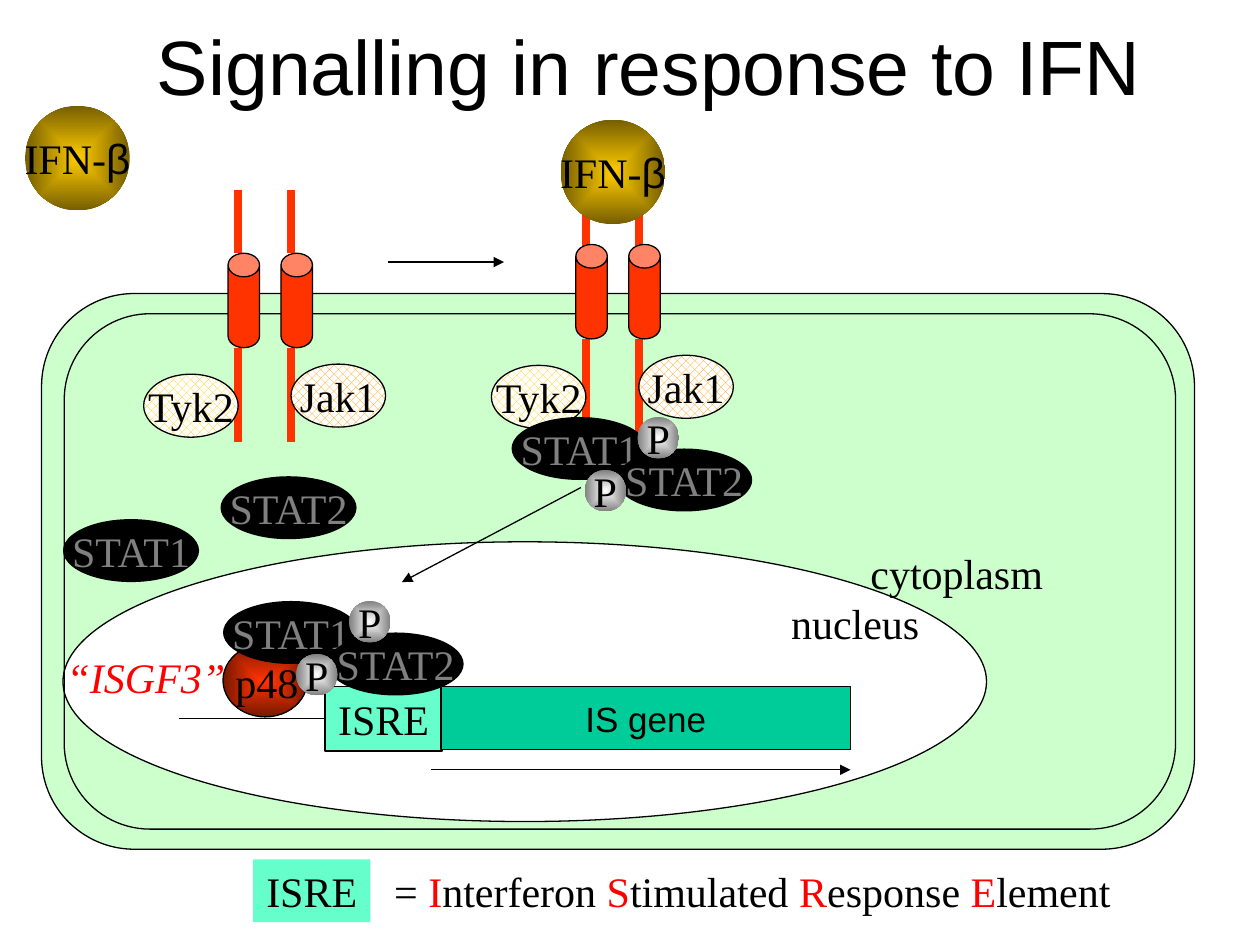
from lxml.etree import SubElement
from pptx import Presentation
from pptx.dml.color import RGBColor
from pptx.enum.dml import MSO_PATTERN
from pptx.enum.shapes import MSO_CONNECTOR, MSO_SHAPE
from pptx.enum.text import MSO_ANCHOR, PP_ALIGN
from pptx.oxml.ns import qn
from pptx.util import Inches, Pt

color = RGBColor.from_string
SERIF = "Times New Roman"
OVAL = MSO_SHAPE.OVAL
GOLD = ("FFCC00", "765E00")
SILVER = ("FFFFFF", "808080")
RUST = ("FF3300", "761800")


def add_box(parent, kind, place, fill=None, line=None, text="", ink="000000", font=SERIF, size=24):
    place = [Inches(length) for length in place]
    if kind is None:
        box = parent.add_textbox(*place)
    else:
        box = parent.add_shape(kind, *place)
        box.shadow.inherit = False
        if isinstance(fill, tuple):
            box.fill.gradient()
            for stop, shade in zip(box.fill.gradient_stops, fill):
                stop.color.rgb = color(shade)
            gradient = box._element.spPr.find(qn("a:gradFill"))
            gradient.remove(gradient.find(qn("a:lin")))
            center = SubElement(gradient, qn("a:path"), path="shape")
            SubElement(center, qn("a:fillToRect"), l="50000", t="50000", r="50000", b="50000")
        elif fill:
            box.fill.solid()
            box.fill.fore_color.rgb = color(fill)
        else:
            box.fill.background()
        if line:
            box.line.color.rgb = color(line)
            box.line.width = Pt(0.75)
        else:
            box.line.fill.background()
    if text:
        frame = box.text_frame
        frame.text = text
        frame.word_wrap = kind is None
        frame.vertical_anchor = MSO_ANCHOR.TOP if kind is None else MSO_ANCHOR.MIDDLE
        para = frame.paragraphs[0]
        para.alignment = PP_ALIGN.LEFT if kind is None else PP_ALIGN.CENTER
        span = para.runs[0]
        span.font.name = font
        span.font.size = Pt(size)
        span.font.color.rgb = color(ink)
    return box


def add_line(start, end, ink="000000", width=0.75, arrow=False):
    points = [Inches(length) for length in start + end]
    line = page.shapes.add_connector(MSO_CONNECTOR.STRAIGHT, *points)
    line.line.color.rgb = color(ink)
    line.line.width = Pt(width)
    if arrow:
        SubElement(line.line._get_or_add_ln(), qn("a:tailEnd"), type="triangle")
    SubElement(line._element.spPr, qn("a:effectLst"))
    return line


deck = Presentation()
deck.slide_width = Inches(10)
deck.slide_height = Inches(7.5)
page = deck.slides.add_slide(deck.slide_layouts[5])
shapes = page.shapes

title = shapes.title
title.left, title.top, title.width, title.height = Inches(0.51), 0, Inches(9.29), Inches(1.02)
title.text_frame.text = "Signalling in response to IFN"
title.text_frame.vertical_anchor = MSO_ANCHOR.MIDDLE
heading = title.text_frame.paragraphs[0]
heading.alignment = PP_ALIGN.CENTER
heading.runs[0].font.name = "Arial"
heading.runs[0].font.size = Pt(44)
heading.runs[0].font.color.rgb = color("000000")

outer_membrane = add_box(shapes, MSO_SHAPE.ROUNDED_RECTANGLE, (0.33, 2.33, 9.15, 4.41), "CCFFCC", "000000")
nucleus = add_box(shapes, OVAL, (0.5, 4.3, 7.33, 2.22), "FFFFFF", "000000")
for name, left, top in (("STAT1", 0.5, 4.12), ("STAT2", 1.75, 3.78)):
    add_box(shapes, OVAL, (left, top, 1.08, 0.5), "000000", text=name, ink="808080")
inner_membrane = add_box(shapes, MSO_SHAPE.ROUNDED_RECTANGLE, (0.51, 2.49, 8.82, 4.09), line="000000")

add_line((3.08, 2.08), (4, 2.08), arrow=True)
add_line((4.61, 3.87), (3.19, 4.62), arrow=True)
strand = add_line((1.42, 5.7), (6.75, 5.7))
add_box(shapes, MSO_SHAPE.RECTANGLE, (2.58, 5.45, 0.93, 0.51), "66FFCC", "000000", "ISRE")

for left, can_top, tip in ((1.89, 2.01, 1.51), (4.65, 1.94, 1.67)):
    chains = (left, left + 0.42)
    for x in chains:
        add_line((x, tip + 0.5), (x, tip), "FF3300", 4.5)
        add_line((x, can_top + 0.75), (x, can_top + 1.5), "FF3300", 4.5)
    for x in chains:
        can = add_box(shapes, MSO_SHAPE.CAN, (x - 0.08, can_top, 0.25, 0.75), "FF3300", "000000")
        can.adjustments[0] = 0.75
    for name, x, drop, tint in (("Tyk2", left - 0.75, 0.96, "FFCC00"), ("Jak1", left + 0.42, 0.88, "FF9900")):
        kinase = add_box(shapes, OVAL, (x, can_top + drop, 0.75, 0.5), tint, "000000", name)
        kinase.fill.patterned()
        kinase.fill.pattern = MSO_PATTERN.PERCENT_50
        kinase.fill.fore_color.rgb = color(tint)
        kinase.fill.back_color.rgb = color("FFFFFF")

for left, top in ((0.2, 0.84), (4.45, 0.95)):
    ligand = add_box(shapes, OVAL, (left, top, 0.83, 0.83), GOLD, text="IFN-")
    beta = ligand.text_frame.paragraphs[0].add_run()
    beta.text = "β"
    beta.font.name = "Arial"
    beta.font.size = Pt(24)
    beta.font.color.rgb = color("000000")

for left, top, has_p48 in ((1.77, 4.77, True), (4.06, 3.31, False)):
    dimer = shapes.add_group_shape().shapes
    if has_p48:
        add_box(dimer, OVAL, (left, top + 0.34, 0.67, 0.58), RUST, "000000")
    for name, x, y in (("STAT1", 0, 0), ("STAT2", 0.83, 0.25)):
        add_box(dimer, OVAL, (left + x, top + y, 1.08, 0.5), "000000", text=name, ink="808080")
    for x, y in ((1, 0), (0.58, 0.42)):
        add_box(dimer, OVAL, (left + x, top + y, 0.33, 0.33), SILVER, text="P")

gene = add_box(shapes, MSO_SHAPE.RECTANGLE, (3.5, 5.45, 3.25, 0.5), "00CC99", "000000", "IS gene", font="Arial", size=20)
strand.end_connect(gene, 3)
add_line((3.42, 6.11), (6.75, 6.11), "040008", arrow=True)

for name, left, top, width in (("p48", 1.77, 5.16, 0.94), ("cytoplasm", 6.81, 4.3, 1.57), ("nucleus", 6.18, 4.69, 1.5)):
    add_box(shapes, None, (left, top, width, 0.5), text=name)

add_box(shapes, MSO_SHAPE.RECTANGLE, (2.01, 6.82, 0.93, 0.5), "66FFCC", text="ISRE")
legend = add_box(shapes, None, (3.03, 6.82, 6.14, 0.5), text="= ")
for word in ("Interferon ", "Stimulated ", "Response ", "Element"):
    for part, ink in ((word[0], "FF0000"), (word[1:], "000000")):
        span = legend.text_frame.paragraphs[0].add_run()
        span.text = part
        span.font.name = SERIF
        span.font.size = Pt(24)
        span.font.color.rgb = color(ink)

complex_label = add_box(shapes, None, (0.43, 5.17, 1.5, 0.46), text="“ISGF3”", ink="FF0000")
complex_label.text_frame.paragraphs[0].line_spacing = 0.9
complex_label.text_frame.paragraphs[0].runs[0].font.italic = True

deck.save("out.pptx")
